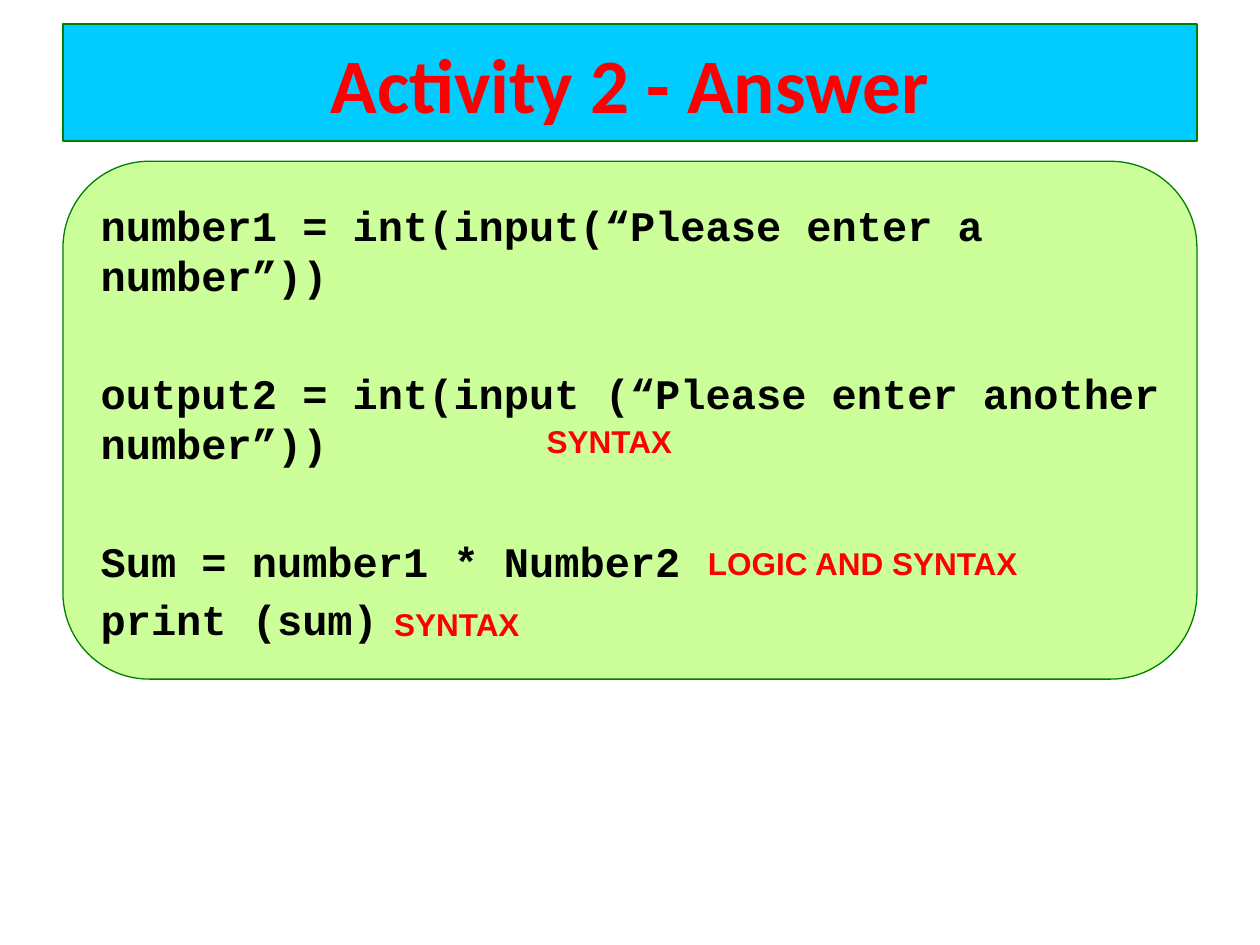
from pptx import Presentation
from pptx.dml.color import RGBColor
from pptx.enum.shapes import MSO_SHAPE
from pptx.enum.text import MSO_ANCHOR, PP_ALIGN
from pptx.util import Inches, Pt

ROUNDED = MSO_SHAPE.ROUNDED_RECTANGLE
TOP, MIDDLE = MSO_ANCHOR.TOP, MSO_ANCHOR.MIDDLE
LEFT, CENTER = PP_ALIGN.LEFT, PP_ALIGN.CENTER

BLACK, RED, GREEN = "000000", "FF0000", "008000"
SKY, LIME = "00CCFF", "CCFF99"
TITLE = "Activity 2 - Answer"
LINE_GAP, BLOCK_GAP = 4.8, 38.4
CODE = [
    ("number1 = int(input(“Please enter a number”))", 0),
    ("output2 = int(input (“Please enter another number”))", BLOCK_GAP),
    ("Sum = number1 * Number2", BLOCK_GAP),
    ("print (sum)", LINE_GAP),
]
ERRORS = [
    ("SYNTAX", 4.24, 3.3, 1.21),
    ("LOGIC AND SYNTAX", 5.52, 4.27, 2.68),
    ("SYNTAX", 3.03, 4.75, 1.21),
]


def rgb(color):
    return RGBColor.from_string(color)


def add_text(paragraph, text, font, size, color, align=LEFT):
    paragraph.alignment = align
    run = paragraph.add_run()
    run.text = text
    run.font.name = font
    run.font.size = Pt(size)
    run.font.bold = True
    run.font.color.rgb = rgb(color)


def paint(panel, fill):
    panel.fill.solid()
    panel.fill.fore_color.rgb = rgb(fill)
    panel.line.color.rgb = rgb(GREEN)
    panel.line.width = Pt(0.75)


def main():
    deck = Presentation()
    deck.slide_width, deck.slide_height = Inches(10), Inches(7.5)
    slide = deck.slides.add_slide(deck.slide_layouts[5])

    title = slide.shapes.title
    title.left, title.top = Inches(0.5), Inches(0.19)
    title.width, title.height = Inches(9), Inches(0.93)
    paint(title, SKY)
    title.text_frame.vertical_anchor = MIDDLE
    add_text(title.text_frame.paragraphs[0], TITLE, "Calibri", 44, RED, CENTER)

    program = slide.shapes.add_shape(
        ROUNDED, Inches(0.5), Inches(1.28), Inches(9), Inches(4.11))
    program.shadow.inherit = False
    paint(program, LIME)
    frame = program.text_frame
    frame.word_wrap = True
    frame.vertical_anchor = TOP
    frame.margin_top = Inches(0.1)
    for index, (statement, gap) in enumerate(CODE):
        paragraph = frame.add_paragraph() if index else frame.paragraphs[0]
        paragraph.space_before = Pt(gap)
        paragraph.line_spacing = Pt(28.8)
        add_text(paragraph, statement, "Courier New", 24, BLACK)

    for error, left, top, width in ERRORS:
        label = slide.shapes.add_textbox(
            Inches(left), Inches(top), Inches(width), Inches(0.4))
        label.text_frame.word_wrap = False
        add_text(label.text_frame.paragraphs[0], error, "Arial", 18, RED)

    deck.save("out.pptx")


if __name__ == "__main__":
    main()
